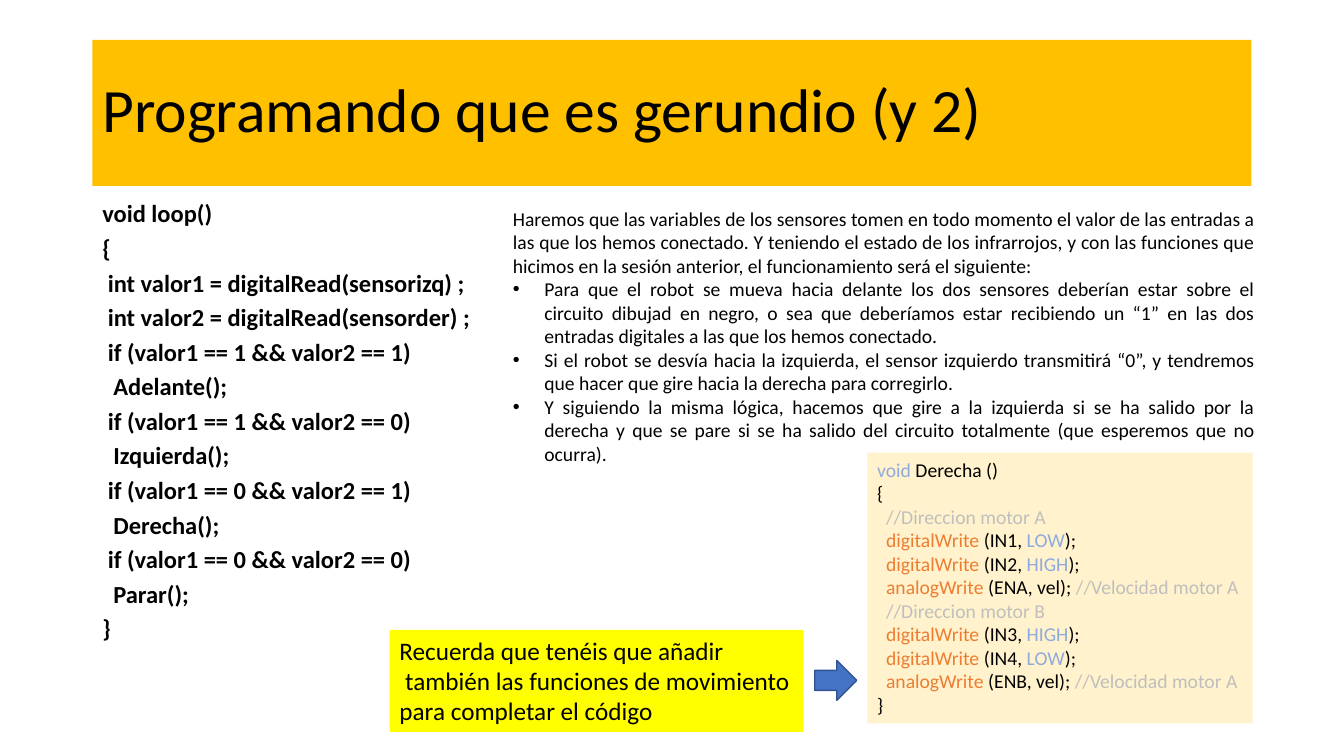
from dataclasses import dataclass

from lxml import etree
from pptx import Presentation
from pptx.dml.color import RGBColor
from pptx.enum import shapes, text
from pptx.oxml import ns
from pptx import util as u


@dataclass(frozen=True)
class Theme:
    font: str = "Calibri"
    ink: str = "000000"
    banner: str = "FFC000"
    code_panel: str = "FFF2CC"
    note: str = "FFFF00"
    arrow: str = "4472C4"
    arrow_line: str = "325491"
    keyword: str = "8FAADC"
    call: str = "ED7D31"
    comment: str = "BFBFBF"
    title_size: float = 44
    note_size: float = 18
    loop_size: float = 17.5
    body_size: float = 14


THEME = Theme()
PX = 9525  # 96 px to the inch

LOOP_LINES = [
    "void loop()",
    "{",
    " int valor1 = digitalRead(sensorizq) ;",
    " int valor2 = digitalRead(sensorder) ;",
    " if (valor1 == 1 && valor2 == 1)",
    "  Adelante();",
    " if (valor1 == 1 && valor2 == 0)",
    "  Izquierda();",
    " if (valor1 == 0 && valor2 == 1)",
    "  Derecha();",
    " if (valor1 == 0 && valor2 == 0)",
    "  Parar();",
    "}",
]
INTRO = (
    "Haremos que las variables de los sensores tomen en todo momento el valor de las "
    "entradas a las que los hemos conectado. Y teniendo el estado de los infrarrojos, y con "
    "las funciones que hicimos en la sesión anterior, el funcionamiento será el siguiente:"
)
CASES = [
    "Para que el robot se mueva hacia delante los dos sensores deberían estar sobre el "
    "circuito dibujad en negro, o sea que deberíamos estar recibiendo un “1” en las dos "
    "entradas digitales a las que los hemos conectado.",
    "Si el robot se desvía hacia la izquierda, el sensor izquierdo transmitirá “0”, y "
    "tendremos que hacer que gire hacia la derecha para corregirlo.",
    "Y siguiendo la misma lógica, hacemos que gire a la izquierda si se ha salido por la "
    "derecha y que se pare si se ha salido del circuito totalmente (que esperemos que no "
    "ocurra).",
]
REMINDER = (
    "Recuerda que tenéis que añadir\n"
    " también las funciones de movimiento para completar el código"
)
# Motor, its enable pin, and the level written to each direction pin
MOTORS = [
    ("A", "ENA", [("IN1", "LOW"), ("IN2", "HIGH")]),
    ("B", "ENB", [("IN3", "HIGH"), ("IN4", "LOW")]),
]


def paint(fill, color):
    fill.solid()
    fill.fore_color.rgb = RGBColor.from_string(color)


def set_font(font, size, color=THEME.ink, bold=False):
    font.name = THEME.font
    font.size = u.Pt(size)
    font.bold = bold
    font.color.rgb = RGBColor.from_string(color)


def add_text_frame(slide, box, fill=None):
    shape = slide.shapes.add_textbox(*(length * PX for length in box))
    if fill:
        paint(shape.fill, fill)
    frame = shape.text_frame
    frame.word_wrap = True
    return frame


def add_paragraphs(frame, lines, size, bold=False):
    """Write one paragraph per line, starting with the frame's first one."""
    for index, line in enumerate(lines):
        paragraph = frame.add_paragraph() if index else frame.paragraphs[0]
        paragraph.text = line
        set_font(paragraph.font, size, bold=bold)
    return frame.paragraphs


def add_bullet(paragraph, indent):
    properties = paragraph._p.get_or_add_pPr()
    properties.set("marL", str(indent * PX))
    properties.set("indent", str(-indent * PX))
    font = etree.SubElement(properties, ns.qn("a:buFont"))
    font.set("typeface", "Arial")
    bullet = etree.SubElement(properties, ns.qn("a:buChar"))
    bullet.set("char", "•")


def add_title(slide, box):
    frame = add_text_frame(slide, box, THEME.banner)
    frame.vertical_anchor = text.MSO_ANCHOR.MIDDLE
    title = add_paragraphs(frame, ["Programando que es gerundio (y 2)"], THEME.title_size)[0]
    title.line_spacing = 0.9


def add_loop_code(slide, box):
    frame = add_text_frame(slide, box)
    for paragraph in add_paragraphs(frame, LOOP_LINES, THEME.loop_size, bold=True):
        paragraph.line_spacing = 0.7
        paragraph.space_before = u.Pt(10)


def add_explanation(slide, box):
    frame = add_text_frame(slide, box)
    paragraphs = add_paragraphs(frame, [INTRO, *CASES], THEME.body_size)
    for paragraph in paragraphs:
        paragraph.alignment = text.PP_ALIGN.JUSTIFY
    for paragraph in paragraphs[1:]:
        add_bullet(paragraph, 30)


def turn_right_lines():
    """Return the Derecha function as lines of (text, colour) pieces."""
    ink, keyword, call, comment = THEME.ink, THEME.keyword, THEME.call, THEME.comment
    lines = [[("void", keyword), (" Derecha ()", ink)], [("{", ink)]]
    for motor, enable, pins in MOTORS:
        lines.append([(f"  //Direccion motor {motor}", comment)])
        for pin, level in pins:
            lines.append([("  digitalWrite", call), (f" ({pin}, ", ink),
                          (level, keyword), (");", ink)])
        lines.append([("  analogWrite", call), (f" ({enable}, vel); ", ink),
                      ("//Velocidad motor A", comment)])
    return lines + [[("}", ink)]]


def add_turn_right_code(slide, box):
    frame = add_text_frame(slide, box, THEME.code_panel)
    lines = turn_right_lines()
    paragraphs = add_paragraphs(frame, [""] * len(lines), THEME.body_size)
    for paragraph, line in zip(paragraphs, lines):
        for piece, color in line:
            run = paragraph.add_run()
            run.text = piece
            set_font(run.font, THEME.body_size, color)


def add_reminder(slide, box):
    frame = add_text_frame(slide, box, THEME.note)
    add_paragraphs(frame, [REMINDER], THEME.note_size)


def add_arrow(slide, box):
    arrow = slide.shapes.add_shape(
        shapes.MSO_SHAPE.RIGHT_ARROW, *(length * PX for length in box))
    arrow.shadow.inherit = False
    paint(arrow.fill, THEME.arrow)
    paint(arrow.line.fill, THEME.arrow_line)
    arrow.line.width = u.Pt(1)


def main():
    presentation = Presentation()
    presentation.slide_width = 1280 * PX
    presentation.slide_height = 720 * PX
    slide = presentation.slides.add_slide(presentation.slide_layouts[6])
    add_loop_code(slide, (88, 192, 394, 457))
    add_title(slide, (88, 38, 1104, 139))
    add_turn_right_code(slide, (826, 431, 367, 258))
    add_reminder(slide, (371, 600, 394, 97))
    add_arrow(slide, (776, 629, 40, 38))
    add_explanation(slide, (479, 192, 726, 258))
    presentation.save("out.pptx")


if __name__ == "__main__":
    main()
